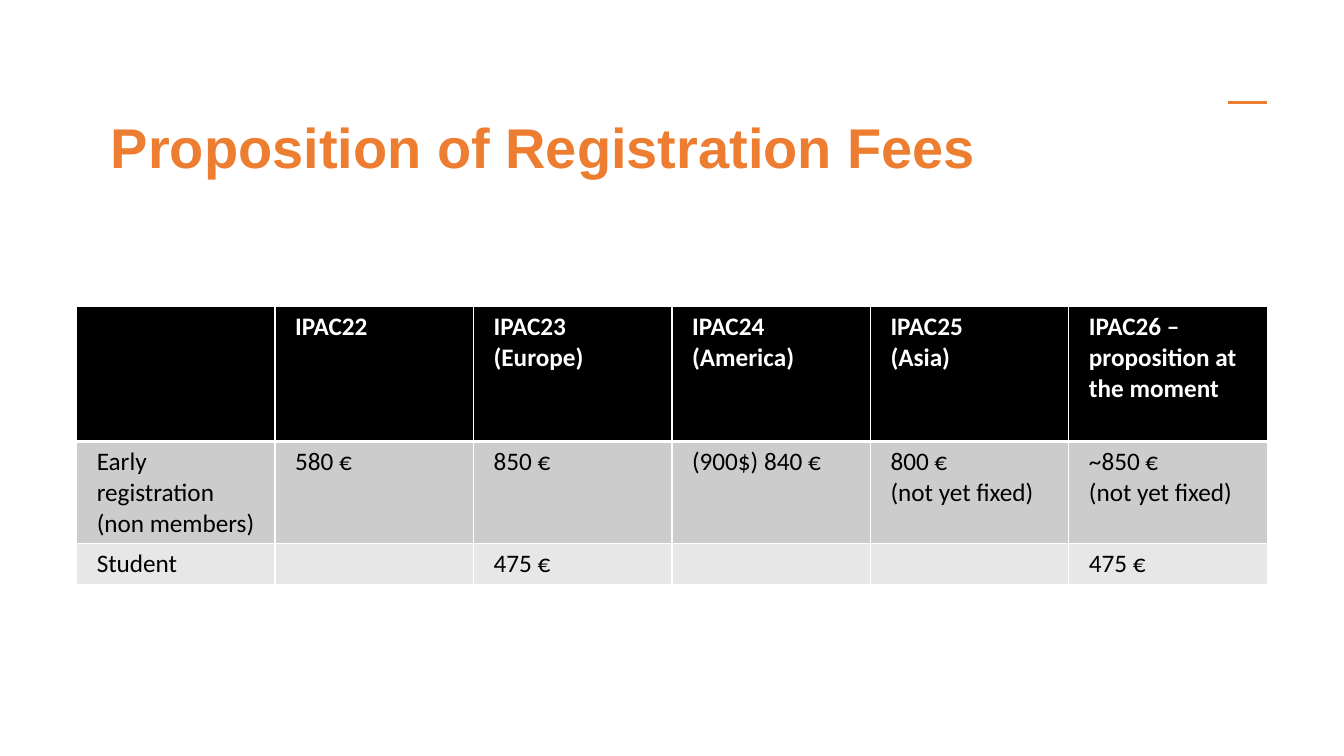
from dataclasses import dataclass

from lxml.etree import SubElement
from pptx import Presentation
from pptx.dml.color import RGBColor
from pptx.enum.shapes import MSO_CONNECTOR as Connector
from pptx.enum.text import MSO_ANCHOR as Anchor, PP_ALIGN as Align
from pptx.oxml import parse_xml
from pptx.oxml.ns import nsdecls, qn
from pptx.util import Inches, Pt


@dataclass(frozen=True)
class Theme:
    accent: str = "ED7D31"
    header: str = "000000"
    bands: tuple = ("CCCCCC", "E7E7E7")
    light: str = "FFFFFF"
    dark: str = "000000"
    title_font: str = "Arial"
    body_font: str = "Calibri"
    title_size: int = 40
    body_size: int = 18
    accent_line: float = 2
    cell_line: float = 1
    header_line: float = 3


WIDTH, HEIGHT = 13.33, 7.5
MARGIN = 0.76
COLUMN = (WIDTH - 2 * MARGIN) / 6
ROW_HEIGHTS = (1.34, 1.01, 0.4)
FEES = (
    ("", "IPAC22", "IPAC23\n(Europe)", "IPAC24\n(America)", "IPAC25\n(Asia)",
     "IPAC26 – proposition at the moment"),
    ("Early registration (non members)", "580 €", "850 €", "(900$) 840 €",
     "800 €\n(not yet fixed)", "~850 €\n(not yet fixed)"),
    ("Student", "", "475 €", "", "", "475 €"),
)


def write_text(frame, text, *, font, size, color, bold=False, spacing=1.0):
    """Fill a text frame, one paragraph for each line of text."""
    frame.word_wrap = True
    frame.text = text
    for paragraph in frame.paragraphs:
        paragraph.alignment = Align.LEFT
        paragraph.line_spacing = spacing
        paragraph.font.name = font
        paragraph.font.size = Pt(size)
        paragraph.font.bold = bold
        paragraph.font.color.rgb = RGBColor.from_string(color)


def set_borders(cell, color, **widths):
    """Draw cell borders; the sides L, R, T and B take widths in points."""
    properties = cell._tc.get_or_add_tcPr()
    for position, side in enumerate("LRTB"):
        border = parse_xml(
            f'<a:ln{side} {nsdecls("a")} w="{Pt(widths[side])}"><a:solidFill>'
            f'<a:srgbClr val="{color}"/></a:solidFill></a:ln{side}>')
        properties.insert(position, border)


class SlideBuilder:
    def __init__(self, theme):
        self.theme = theme
        self.presentation = Presentation()
        self.presentation.slide_width = Inches(WIDTH)
        self.presentation.slide_height = Inches(HEIGHT)
        layout = self.presentation.slide_layouts[5]
        self.slide = self.presentation.slides.add_slide(layout)

    def add_title(self, text, left, top, width, height):
        title = self.slide.shapes.title
        title.left, title.top = Inches(left), Inches(top)
        title.width, title.height = Inches(width), Inches(height)
        title.text_frame.vertical_anchor = Anchor.MIDDLE
        write_text(title.text_frame, text, font=self.theme.title_font,
                   size=self.theme.title_size, color=self.theme.accent,
                   bold=True, spacing=0.9)

    def add_rule(self, left, right, top):
        rule = self.slide.shapes.add_connector(
            Connector.STRAIGHT, Inches(left), Inches(top), Inches(right), Inches(top))
        rule.line.color.rgb = RGBColor.from_string(self.theme.accent)
        rule.line.width = Pt(self.theme.accent_line)
        SubElement(rule._element.spPr, qn("a:effectLst"))

    def add_table(self, rows, left, top, column_width, row_heights):
        columns = len(rows[0])
        table = self.slide.shapes.add_table(
            len(rows), columns, Inches(left), Inches(top),
            Inches(column_width * columns), Inches(sum(row_heights))).table
        for column in table.columns:
            column.width = Inches(column_width)
        for row_index, texts in enumerate(rows):
            table.rows[row_index].height = Inches(row_heights[row_index])
            for column_index, text in enumerate(texts):
                self.style_cell(table.cell(row_index, column_index), text, row_index)

    def style_cell(self, cell, text, row_index):
        theme = self.theme
        is_header = row_index == 0
        fill = theme.header if is_header else theme.bands[(row_index - 1) % 2]
        cell.fill.solid()
        cell.fill.fore_color.rgb = RGBColor.from_string(fill)
        cell.margin_left = cell.margin_right = Inches(0.2)
        cell.margin_top = cell.margin_bottom = Inches(0.05)
        write_text(cell.text_frame, text, font=theme.body_font, size=theme.body_size,
                   color=theme.light if is_header else theme.dark, bold=is_header)
        thin, thick = theme.cell_line, theme.header_line
        set_borders(cell, theme.light, L=thin, R=thin,
                    T=thick if row_index == 1 else thin,
                    B=thick if is_header else thin)


def main():
    builder = SlideBuilder(Theme())
    right = WIDTH - MARGIN
    builder.add_rule(right - 0.39, right, 1.02)
    builder.add_title("Proposition of Registration Fees", 1, 0.87, right - 1, 1.25)
    builder.add_table(FEES, MARGIN, 3.04, COLUMN, ROW_HEIGHTS)
    builder.presentation.save("out.pptx")


if __name__ == "__main__":
    main()
